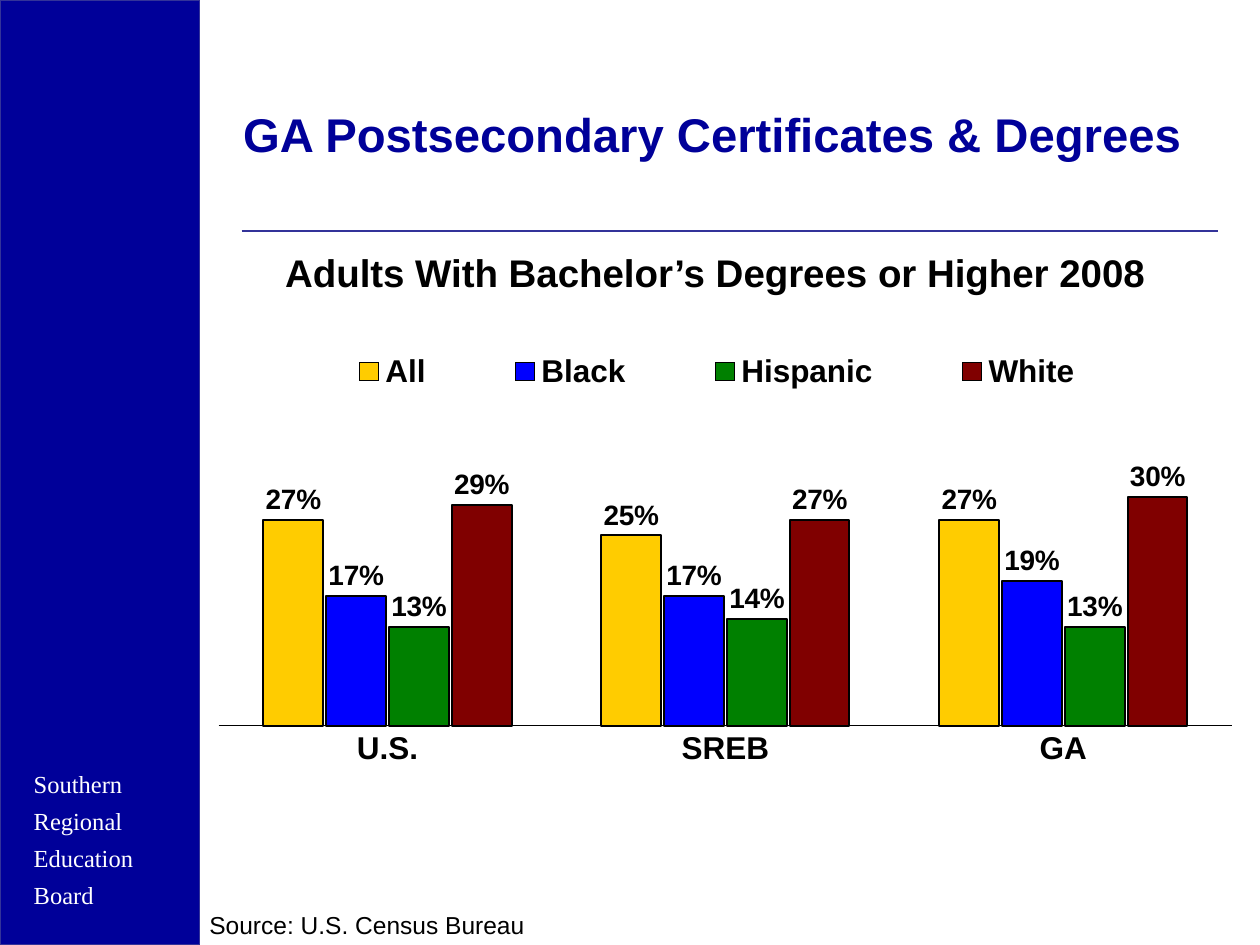
from lxml import etree
from pptx import Presentation
from pptx.chart.data import CategoryChartData
from pptx.dml.color import RGBColor
from pptx.enum.chart import XL_CHART_TYPE, XL_LABEL_POSITION, XL_LEGEND_POSITION
from pptx.enum.chart import XL_TICK_LABEL_POSITION, XL_TICK_MARK
from pptx.enum.shapes import MSO_CONNECTOR, MSO_SHAPE
from pptx.oxml import parse_xml
from pptx.oxml.ns import nsdecls, qn
from pptx.util import Cm, Pt

COLORS = {
    "navy": "000099", "rule": "333399", "white": "FFFFFF", "black": "000000",
    "All": "FFCC00", "Black": "0000FF", "Hispanic": "008000", "White": "800000",
}
GROUPS = ["U.S.", "SREB", "GA"]
SHARES = {
    "All": (0.27, 0.25, 0.27),
    "Black": (0.17, 0.17, 0.19),
    "Hispanic": (0.13, 0.14, 0.13),
    "White": (0.29, 0.27, 0.3),
}


def layout(x, y, w, h, inner=False):
    """Manual chart layout, in fractions of the chart frame."""
    target = '<c:layoutTarget val="inner"/>' if inner else ""
    return parse_xml(
        f'<c:layout {nsdecls("c")}><c:manualLayout>{target}'
        '<c:xMode val="edge"/><c:yMode val="edge"/>'
        f'<c:x val="{x}"/><c:y val="{y}"/><c:w val="{w}"/><c:h val="{h}"/>'
        "</c:manualLayout></c:layout>")


class Deck:
    """Holds the colours, the fonts and the current slide."""

    def __init__(self):
        self.show = Presentation()
        self.show.slide_width, self.show.slide_height = Cm(25.4), Cm(19.05)
        self.slide = self.show.slides.add_slide(self.show.slide_layouts[6])
        self.shapes = self.slide.shapes

    def rgb(self, name):
        return RGBColor.from_string(COLORS[name])

    def font(self, font, size, color="black", bold=False, face="Arial"):
        font.name, font.size, font.bold = face, Pt(size), bold
        font.color.rgb = self.rgb(color)

    def edge(self, line, color, width):
        line.color.rgb = self.rgb(color)
        line.width = Pt(width)

    def panel(self, x, y, w, h, fill, line):
        box = self.shapes.add_shape(MSO_SHAPE.RECTANGLE, Cm(x), Cm(y), Cm(w), Cm(h))
        box.shadow.inherit = False
        box.fill.solid()
        box.fill.fore_color.rgb = self.rgb(fill)
        self.edge(box.line, line, 0.75)

    def rule(self, x, y, end, color):
        line = self.shapes.add_connector(
            MSO_CONNECTOR.STRAIGHT, Cm(x), Cm(y), Cm(end), Cm(y))
        self.edge(line.line, color, 1)
        etree.SubElement(line._element.spPr, qn("a:effectLst"))

    def text(self, x, y, w, h, lines, size, spacing=1, **style):
        frame = self.shapes.add_textbox(Cm(x), Cm(y), Cm(w), Cm(h)).text_frame
        frame.word_wrap = True
        frame.margin_right = 0
        para = frame.paragraphs[0]
        para.line_spacing = spacing
        for i, line in enumerate(lines):
            if i:
                para.add_line_break()
            run = para.add_run()
            run.text = line
            self.font(run.font, size, **style)

    def bars(self, x, y, w, h):
        data = CategoryChartData(number_format="0%")
        data.categories = GROUPS
        for name, shares in SHARES.items():
            data.add_series(name, shares)
        chart = self.shapes.add_chart(
            XL_CHART_TYPE.COLUMN_CLUSTERED, Cm(x), Cm(y), Cm(w), Cm(h), data).chart
        chart.has_title = False
        self.font(chart.font, 16, bold=True)
        self.axes(chart)
        self.legend(chart)
        area = chart._chartSpace.chart.plotArea
        for old in area.findall(qn("c:layout")):
            area.remove(old)
        area.insert(0, layout(0.018, 0.015, 0.956, 0.672, inner=True))

        plot = chart.plots[0]
        plot.gap_width, plot.overlap, plot.vary_by_categories = 150, -5, False
        for bar in plot.series:
            bar.format.fill.solid()
            bar.format.fill.fore_color.rgb = self.rgb(bar.name)
            self.edge(bar.format.line, "black", 1.15)
            tags = bar.data_labels
            tags.show_value = True
            tags.number_format, tags.number_format_is_linked = "0%", False
            tags.position = XL_LABEL_POSITION.OUTSIDE_END
            self.font(tags.font, 16, bold=True)

    def axes(self, chart):
        cat, val = chart.category_axis, chart.value_axis
        for axis in (cat, val):
            axis.major_tick_mark = axis.minor_tick_mark = XL_TICK_MARK.NONE
            axis.has_major_gridlines = False
        self.font(cat.tick_labels.font, 18, bold=True)
        self.edge(cat.format.line, "black", 0.29)
        val.minimum_scale, val.maximum_scale, val.major_unit = 0, 0.5, 0.1
        val.tick_label_position = XL_TICK_LABEL_POSITION.NONE
        val.format.line.fill.background()

    def legend(self, chart):
        chart.has_legend = True
        key = chart.legend
        key.position = XL_LEGEND_POSITION.RIGHT
        key.include_in_layout = False
        self.font(key.font, 18, bold=True)
        node = key._element
        for old in node.findall(qn("c:layout")):
            node.remove(old)
        node.find(qn("c:legendPos")).addnext(layout(0.076, 0.017, 0.824, 0.09))


def main():
    deck = Deck()
    deck.panel(0, 0, 4.02, 19.05, "navy", "rule")
    deck.text(0.43, 15.24, 3.5, 3.81, ["Southern", "Regional", "Education", "Board"],
              14, spacing=1.25, color="white", face="Times New Roman")
    deck.rule(4.87, 4.65, 24.55, "rule")
    deck.bars(4.02, 6.78, 21.38, 11.43)
    deck.text(4.65, 2, 19.9, 1.27, ["GA Postsecondary Certificates & Degrees"],
              27, color="navy", bold=True)
    deck.text(3.97, 18.23, 16.08, 0.82, ["Source: U.S. Census Bureau"], 14)
    deck.text(5.5, 4.9, 18.42, 1.19,
              ["Adults With Bachelor’s Degrees or Higher 2008"], 22, bold=True)
    deck.show.save("out.pptx")


if __name__ == "__main__":
    main()
